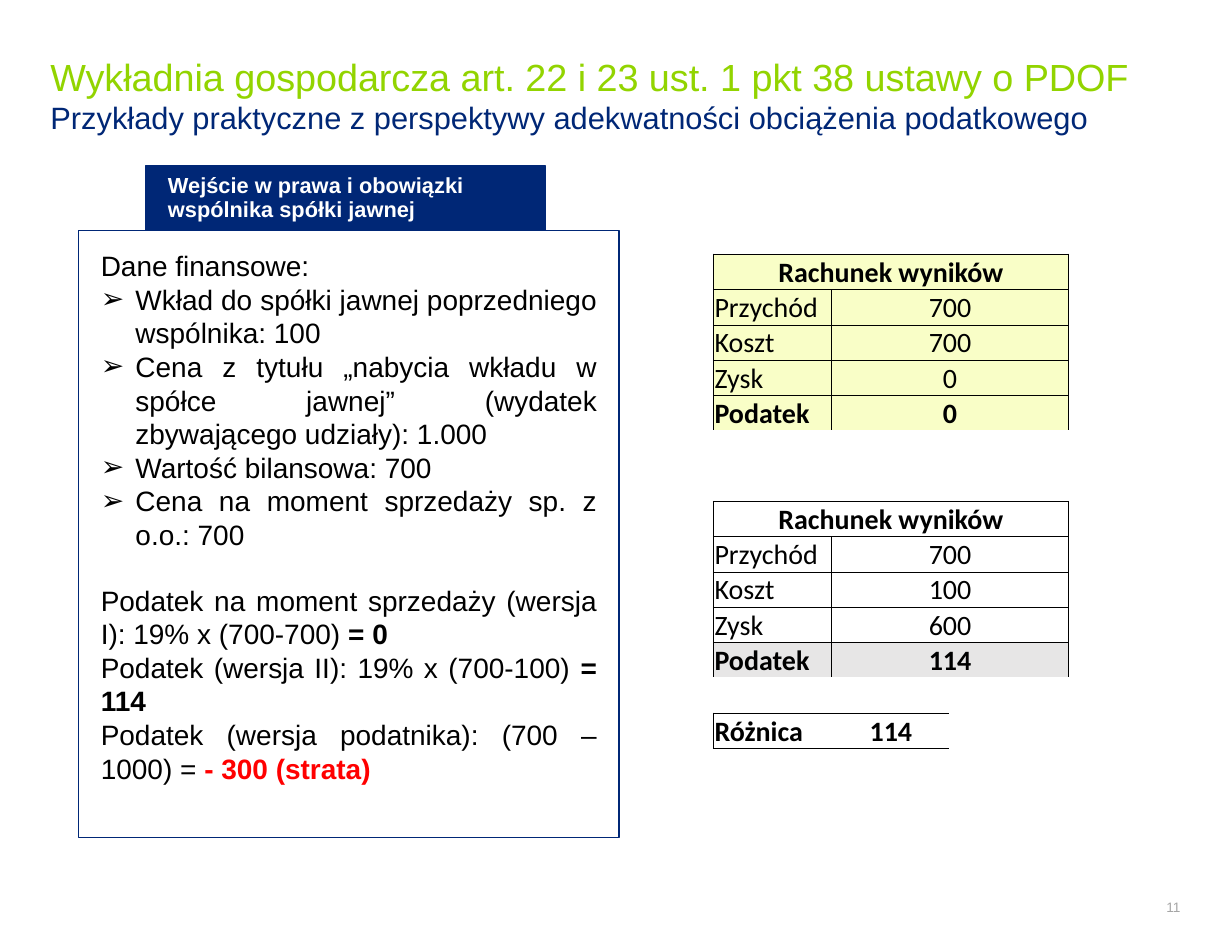
from dataclasses import dataclass
from typing import Optional

from lxml.etree import SubElement
from pptx import Presentation
from pptx.dml.color import RGBColor
from pptx.enum.shapes import MSO_SHAPE as Preset
from pptx.enum.text import MSO_ANCHOR as Anchor, MSO_AUTO_SIZE as AutoSize, PP_ALIGN as Align
from pptx.oxml.ns import qn
from pptx.util import Emu, Inches, Pt

GREEN = RGBColor(0x92, 0xD4, 0x00)
NAVY = RGBColor(0x00, 0x27, 0x76)
WHITE = RGBColor(0xFF, 0xFF, 0xFF)
BLACK = RGBColor(0x00, 0x00, 0x00)
RED = RGBColor(0xFF, 0x00, 0x00)
GREY = RGBColor(0xA6, 0xA6, 0xA6)
CREAM = RGBColor(0xF9, 0xFE, 0xC7)
SILVER = RGBColor(0xE7, 0xE6, 0xE6)

SLIDE_WIDTH, SLIDE_HEIGHT = Inches(11), Inches(8.5)
COLUMN, ROW = SLIDE_WIDTH / 110, SLIDE_HEIGHT / 85
THICK, THIN = Pt(1), Pt(0.5)
LINE_HEIGHT = Pt(20.7)


@dataclass(frozen=True)
class Area:
    left: float
    top: float
    width: float
    height: float

    def lengths(self) -> tuple:
        return (Emu(int(self.left * COLUMN)), Emu(int(self.top * ROW)),
                Emu(int(self.width * COLUMN)), Emu(int(self.height * ROW)))


@dataclass(frozen=True)
class Line:
    text: str
    result: str = ""
    result_color: RGBColor = BLACK
    bullet: bool = False
    gap_before: bool = False


@dataclass(frozen=True)
class Statement:
    first_row: int
    amounts: tuple
    fill: Optional[RGBColor]
    tax_fill: RGBColor


HEADING = "Rachunek wyników"
LABELS = ("Przychód", "Koszt", "Zysk", "Podatek")
STATEMENTS = (
    Statement(0, ("700", "700", "0", "0"), CREAM, CREAM),
    Statement(7, ("700", "100", "600", "114"), None, SILVER),
)
DIFFERENCE_ROW = 13
FINANCIAL_DATA = (
    Line("Dane finansowe:"),
    Line("Wkład do spółki jawnej poprzedniego wspólnika: 100", bullet=True),
    Line("Cena z tytułu „nabycia wkładu w spółce jawnej” (wydatek zbywającego udziały): 1.000", bullet=True),
    Line("Wartość bilansowa: 700", bullet=True),
    Line("Cena na moment sprzedaży sp. z o.o.: 700", bullet=True),
    Line("Podatek na moment sprzedaży (wersja I): 19% x (700-700) ", "= 0", gap_before=True),
    Line("Podatek (wersja II): 19% x (700-100) ", "= 114"),
    Line("Podatek (wersja podatnika): (700 – 1000) = ", "- 300 (strata)", RED),
)


def set_font(font, size: float, color: RGBColor, bold: bool = False, name: str = "Arial") -> None:
    font.name, font.size, font.bold = name, Pt(size), bold
    font.color.rgb = color


def set_frame(frame, anchor, side: float = 0, top: float = 0) -> None:
    frame.word_wrap = True
    frame.auto_size = AutoSize.NONE
    frame.vertical_anchor = anchor
    frame.margin_left = frame.margin_right = Inches(side)
    frame.margin_top = frame.margin_bottom = Inches(top)


def add_title(slide) -> None:
    title = slide.shapes.title
    title.left, title.top, title.width, title.height = Area(4.5, 3.1, 100.9, 10.7).lengths()
    set_frame(title.text_frame, Anchor.MIDDLE)
    heading = title.text_frame.paragraphs[0]
    heading.alignment = Align.LEFT
    main = heading.add_run()
    main.text = "Wykładnia gospodarcza art. 22 i 23 ust. 1 pkt 38 ustawy o PDOF"
    set_font(main.font, 24.3, GREEN)
    heading.add_line_break()
    subtitle = heading.add_run()
    subtitle.text = "Przykłady praktyczne z perspektywy adekwatności obciążenia podatkowego"
    set_font(subtitle.font, 19.8, NAVY)


def add_page_number(slide) -> None:
    frame = slide.shapes.add_textbox(*Area(95.9, 79.4, 9.5, 3.1).lengths()).text_frame
    set_frame(frame, Anchor.MIDDLE)
    number = frame.paragraphs[0]
    number.text = "11"
    number.alignment = Align.RIGHT
    set_font(number.font, 8.8, GREY)


def add_panel(slide, area: Area, fill: Optional[RGBColor]):
    panel = slide.shapes.add_shape(Preset.RECTANGLE, *area.lengths())
    panel.shadow.inherit = False
    if fill is None:
        panel.fill.background()
    else:
        panel.fill.solid()
        panel.fill.fore_color.rgb = fill
    panel.line.color.rgb = NAVY
    panel.line.width = THICK
    return panel.text_frame


def add_banner(slide) -> None:
    frame = add_panel(slide, Area(13, 14.8, 35.7, 5.8), NAVY)
    set_frame(frame, Anchor.MIDDLE, side=0.2)
    banner = frame.paragraphs[0]
    banner.text = "Wejście w prawa i obowiązki wspólnika spółki jawnej"
    banner.alignment = Align.LEFT
    banner.line_spacing = Pt(15)
    set_font(banner.font, 14, WHITE, bold=True)


def add_bullet(paragraph) -> None:
    properties = paragraph._p.get_or_add_pPr()
    indent = Inches(0.31)
    properties.set("marL", str(indent))
    properties.set("indent", str(-indent))
    SubElement(properties, qn("a:buFont"), typeface="Arial")
    SubElement(properties, qn("a:buChar"), char="➢")


def add_financial_data(slide) -> None:
    frame = add_panel(slide, Area(7, 20.6, 48.3, 54.2), None)
    set_frame(frame, Anchor.TOP, side=0.2, top=0.16)
    for index, line in enumerate(FINANCIAL_DATA):
        paragraph = frame.add_paragraph() if index else frame.paragraphs[0]
        paragraph.alignment = Align.JUSTIFY
        if line.gap_before:
            paragraph.space_before = LINE_HEIGHT
        if line.bullet:
            add_bullet(paragraph)
        set_font(paragraph.font, 18, BLACK)
        paragraph.add_run().text = line.text
        if line.result:
            result = paragraph.add_run()
            result.text = line.result
            result.font.bold = True
            result.font.color.rgb = line.result_color


def set_borders(cell, **widths: int) -> None:
    properties = cell._tc.get_or_add_tcPr()
    for position, side in enumerate(("left", "right", "top", "bottom")):
        width = widths.get(side, 0)
        edge = properties.makeelement(qn(f"a:ln{side[0].upper()}"), {"w": str(int(width))})
        if width:
            SubElement(SubElement(edge, qn("a:solidFill")), qn("a:srgbClr"), val=str(BLACK))
        else:
            SubElement(edge, qn("a:noFill"))
        properties.insert(position, edge)


def write_cell(cell, text: str, align, bold: bool, fill: Optional[RGBColor] = None) -> None:
    entry = cell.text_frame.paragraphs[0]
    entry.text = text
    entry.alignment = align
    set_font(entry.font, 18, BLACK, bold, "Calibri")
    if fill is not None:
        cell.fill.solid()
        cell.fill.fore_color.rgb = fill


def fill_statement(table, statement: Statement) -> None:
    top = statement.first_row
    heading = table.cell(top, 0)
    heading.merge(table.cell(top, 2))
    write_cell(heading, HEADING, Align.CENTER, True, statement.fill)
    for column in range(3):
        set_borders(table.cell(top, column), left=0 if column else THICK,
                    right=THICK if column in (0, 2) else 0, top=THICK, bottom=THIN)
    for row, (label, amount) in enumerate(zip(LABELS, statement.amounts), top + 1):
        is_tax = label == LABELS[-1]
        fill = statement.tax_fill if is_tax else statement.fill
        bottom = THICK if is_tax else THIN
        name, value, spanned = (table.cell(row, column) for column in range(3))
        value.merge(spanned)
        write_cell(name, label, Align.LEFT, is_tax, fill)
        write_cell(value, amount, Align.CENTER, is_tax, fill)
        set_borders(name, left=THICK, right=THIN, top=THIN, bottom=bottom)
        set_borders(value, left=THIN, right=THICK, top=THIN, bottom=bottom)
        set_borders(spanned, right=THICK, top=THIN, bottom=bottom)


def add_results_table(slide) -> None:
    table = slide.shapes.add_table(14, 3, *Area(63.7, 22.7, 31.7, 44.2).lengths()).table
    table.first_row = table.horz_banding = False
    for cell in table.iter_cells():
        cell.margin_left = cell.margin_right = cell.margin_top = Inches(0.01)
        cell.margin_bottom = 0
        cell.vertical_anchor = Anchor.BOTTOM
        cell.fill.background()
    for statement in STATEMENTS:
        fill_statement(table, statement)
    name, value = table.cell(DIFFERENCE_ROW, 0), table.cell(DIFFERENCE_ROW, 1)
    write_cell(name, "Różnica", Align.LEFT, True)
    write_cell(value, "114", Align.CENTER, True)
    set_borders(name, left=THICK, top=THICK, bottom=THICK)
    set_borders(value, right=THICK, top=THICK, bottom=THICK)


def main() -> None:
    deck = Presentation()
    deck.slide_width, deck.slide_height = SLIDE_WIDTH, SLIDE_HEIGHT
    slide = deck.slides.add_slide(deck.slide_layouts[5])
    add_title(slide)
    add_page_number(slide)
    add_banner(slide)
    add_financial_data(slide)
    add_results_table(slide)
    deck.save("out.pptx")


if __name__ == "__main__":
    main()
